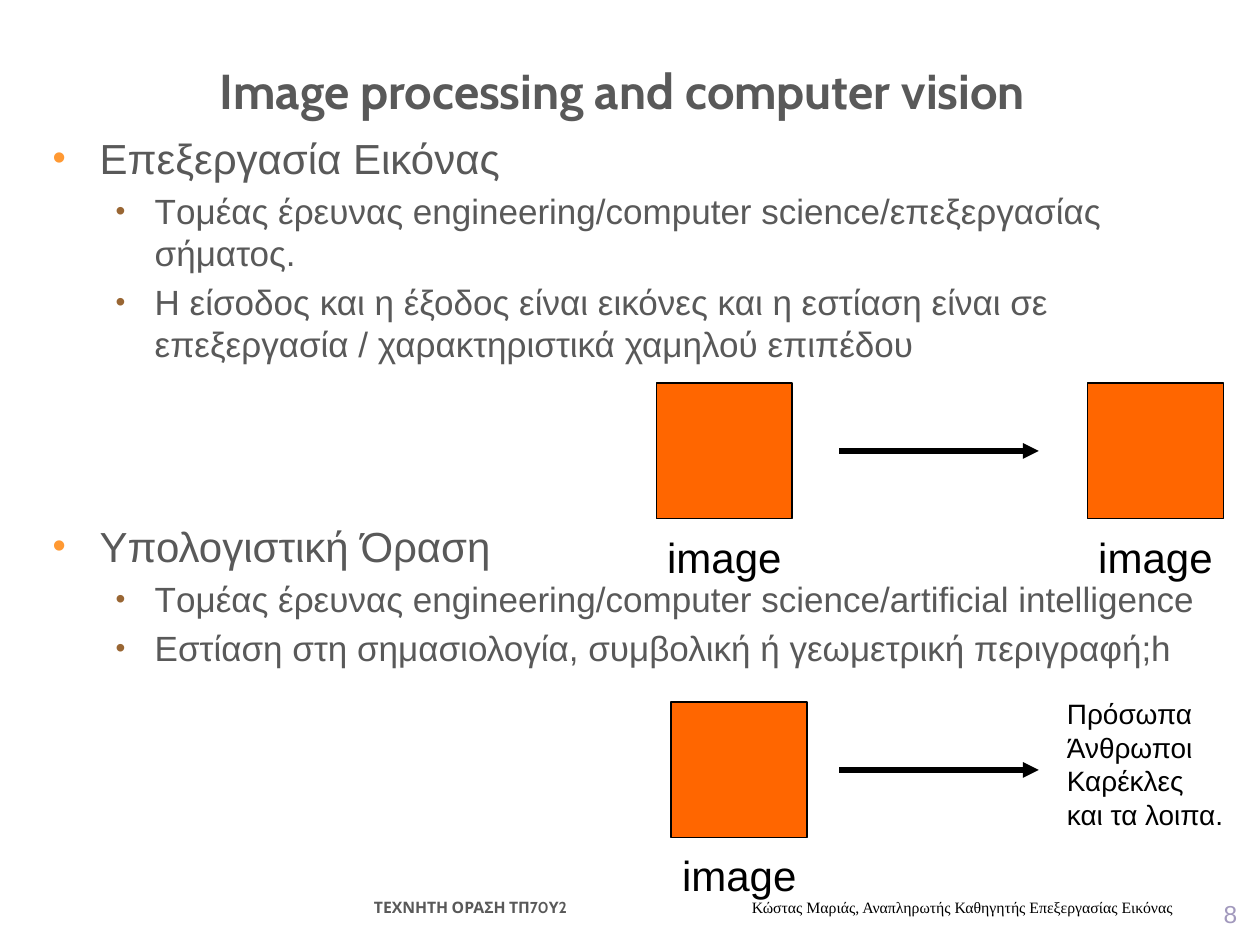
from lxml.etree import SubElement
from pptx import Presentation
from pptx.dml.color import RGBColor
from pptx.enum.shapes import MSO_CONNECTOR, MSO_SHAPE
from pptx.enum.text import MSO_ANCHOR, PP_ALIGN
from pptx.oxml.ns import qn
from pptx.util import Cm, Pt

COLOURS = {"text": "595959", "black": "000000", "square": "FF6600",
           "bullet": "FF9933", "sub_bullet": "996633", "number": "A299BD"}

# Per outline level: size, left margin and hanging indent (cm), bullet size (%), colour
LEVELS = [(24, 0.95, 0.95, 90, "bullet"), (20, 2.06, 0.79, 80, "sub_bullet")]

# Level, text, space before (pt)
OUTLINE = [
    (0, "Επεξεργασία Εικόνας", 0),
    (1, "Tομέας έρευνας engineering/computer science/επεξεργασίας σήματος.", 4),
    (1, "Η είσοδος και η έξοδος είναι εικόνες και η εστίαση είναι σε "
        "επεξεργασία / χαρακτηριστικά χαμηλού επιπέδου", 4),
    (0, "Υπολογιστική Όραση", 89),
    (1, "Tομέας έρευνας engineering/computer science/artificial intelligence", 4),
    (1, "Εστίαση στη σημασιολογία, συμβολική ή γεωμετρική περιγραφή;h", 4),
]


class SlideBuilder:
    def __init__(self, page, font="Arial"):
        self.page = page
        self.font = font

    def colour(self, name):
        return RGBColor.from_string(COLOURS[name])

    def style(self, para, size, colour, font=None, bold=False):
        para.font.size = Pt(size)
        para.font.name = font or self.font
        para.font.bold = bold
        para.font.color.rgb = self.colour(colour)

    def frame(self, left, top, width, height, anchor=MSO_ANCHOR.TOP, wrap=True):
        box = self.page.shapes.add_textbox(Cm(left), Cm(top), Cm(width), Cm(height))
        box.text_frame.word_wrap = wrap
        box.text_frame.vertical_anchor = anchor
        return box.text_frame

    def text(self, place, lines, size, colour="black", font=None, bold=False,
             align=PP_ALIGN.LEFT, **options):
        frame = self.frame(*place, **options)
        frame.text = "\n".join(lines)
        for para in frame.paragraphs:
            para.alignment = align
            self.style(para, size, colour, font, bold)

    def outline(self, place, items):
        frame = self.frame(*place)
        for index, (level, words, before) in enumerate(items):
            para = frame.add_paragraph() if index else frame.paragraphs[0]
            size, margin, hanging, percent, colour = LEVELS[level]
            para.text = words
            para.level = level
            para.space_before = Pt(before)
            props = para._p.get_or_add_pPr()
            props.set("marL", str(Cm(margin)))
            props.set("indent", str(-Cm(hanging)))
            bullet_colour = SubElement(props, qn("a:buClr"))
            SubElement(bullet_colour, qn("a:srgbClr"), val=COLOURS[colour])
            SubElement(props, qn("a:buSzPct"), val=str(percent * 1000))
            SubElement(props, qn("a:buFont"), typeface=self.font)
            SubElement(props, qn("a:buChar"), char="•")
            self.style(para, size, "text")

    def image_square(self, left, top, side=2.74):
        square = self.page.shapes.add_shape(
            MSO_SHAPE.RECTANGLE, Cm(left), Cm(top), Cm(side), Cm(side))
        square.shadow.inherit = False
        square.fill.solid()
        square.fill.fore_color.rgb = self.colour("square")
        square.line.color.rgb = self.colour("black")
        square.line.width = Pt(0.75)
        self.text((left - 0.03, top + 2.86, 2.82, 1.27), ["image"], 24, wrap=False)

    def arrow(self, start, end, height):
        line = self.page.shapes.add_connector(
            MSO_CONNECTOR.STRAIGHT, Cm(start), Cm(height), Cm(end), Cm(height))
        line.line.color.rgb = self.colour("black")
        line.line.width = Pt(3)
        SubElement(line.line._get_or_add_ln(), qn("a:tailEnd"), type="triangle")
        SubElement(line._element.spPr, qn("a:effectLst"))


def main():
    deck = Presentation()
    deck.slide_width, deck.slide_height = Cm(25.4), Cm(19.05)
    builder = SlideBuilder(deck.slides.add_slide(deck.slide_layouts[6]))

    # Footer and page number
    builder.text((21.46, 18.06, 3.73, 0.79), ["8"], 14, "number",
                 align=PP_ALIGN.RIGHT, anchor=MSO_ANCHOR.BOTTOM)
    builder.text((7.29, 17.98, 6, 0.64), ["ΤΕΧΝΗΤΗ ΟΡΑΣΗ ΤΠ70Υ2"], 9, "text",
                 "Cabin", bold=True)
    builder.text((14.91, 17.98, 9.6, 0.64),
                 ["Κώστας Μαριάς, Αναπληρωτής Καθηγητής Επεξεργασίας Εικόνας"],
                 9, font="Times New Roman")

    # Title and outline
    builder.text((0.3, 0.64, 24.49, 1.9), ["Image processing and computer vision"],
                 28, "text", "Cabin", bold=True, align=PP_ALIGN.CENTER,
                 anchor=MSO_ANCHOR.BOTTOM)
    builder.outline((0.81, 2.54, 23.7, 14.6), OUTLINE)

    # Image processing: image to image
    for left in (13.23, 21.92):
        builder.image_square(left, 7.72)
    builder.arrow(16.92, 20.94, 9.09)

    # Computer vision: image to description
    builder.image_square(13.53, 14.15)
    builder.arrow(16.92, 20.94, 15.52)
    builder.text((21.26, 13.92, 4.14, 3),
                 ["Πρόσωπα", "Άνθρωποι", "Καρέκλες", "και τα λοιπα."], 16)

    deck.save("out.pptx")


if __name__ == "__main__":
    main()
